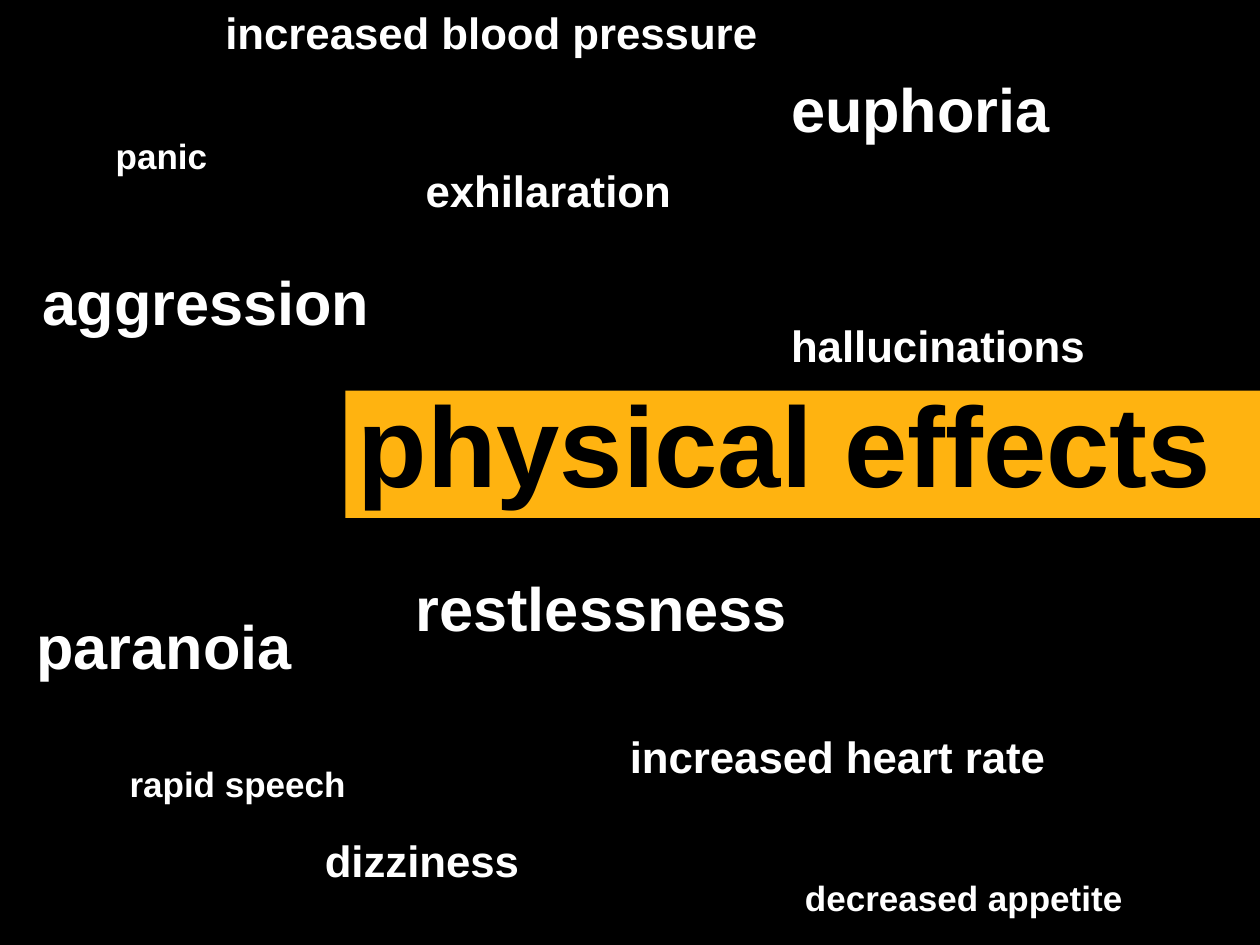
from pptx import Presentation
from pptx.dml.color import RGBColor
from pptx.enum.text import MSO_ANCHOR, MSO_AUTO_SIZE, PP_ALIGN
from pptx.util import Inches, Pt

COLORS = {"black": "000000", "white": "FFFFFF", "amber": "FFB310"}
FONT = "Arial"
WIDE, HIGH = 10, 7.5

# Font size -> box width and height
BOXES = {35: (6.02, 0.69), 25: (5.1, 0.52), 20: (5.13, 0.44)}

# Word, left, top, font size
EFFECTS = [
    ("exhilaration", 3.28, 1.25, 25),
    ("paranoia", 0.19, 4.78, 35),
    ("panic", 0.82, 1.02, 20),
    ("dizziness", 2.48, 6.57, 25),
    ("increased heart rate", 4.9, 5.74, 25),
    ("aggression", 0.24, 2.05, 35),
    ("euphoria", 6.18, 0.52, 35),
    ("hallucinations", 6.18, 2.48, 25),
    ("restlessness", 3.2, 4.48, 35),
    ("increased blood pressure", 1.69, 0, 25),
    ("decreased appetite", 6.29, 6.91, 20),
    ("rapid speech", 0.93, 6, 20),
]


def paint(fill, color):
    fill.solid()
    fill.fore_color.rgb = RGBColor.from_string(COLORS[color])


def write(shape, text, size, color="white", spacing=None):
    frame = shape.text_frame
    frame.word_wrap = True
    frame.auto_size = MSO_AUTO_SIZE.SHAPE_TO_FIT_TEXT
    frame.vertical_anchor = MSO_ANCHOR.TOP
    line = frame.paragraphs[0]
    line.alignment = PP_ALIGN.LEFT
    if spacing:
        line.line_spacing = Pt(spacing)
    run = line.add_run()
    run.text = text
    font = run.font
    font.name, font.size, font.bold = FONT, Pt(size), True
    font.color.rgb = RGBColor.from_string(COLORS[color])


def add_title(slide, text):
    title = slide.shapes.title
    title.left, title.top = Inches(2.74), Inches(3.1)
    title.width, title.height = Inches(WIDE - 2.74), Inches(1.01)
    paint(title.fill, "amber")
    write(title, text, 65, color="black", spacing=65)


def add_effect(slide, text, left, top, size):
    """Place one word, with its box ending at the slide edge at most."""
    width, height = BOXES[size]
    box = slide.shapes.add_textbox(
        Inches(left), Inches(top),
        Inches(min(width, WIDE - left)), Inches(height))
    write(box, text, size)


def main():
    deck = Presentation()
    deck.slide_width, deck.slide_height = Inches(WIDE), Inches(HIGH)
    slide = deck.slides.add_slide(deck.slide_layouts[5])
    paint(slide.background.fill, "black")
    add_title(slide, "physical effects")
    for effect in EFFECTS:
        add_effect(slide, *effect)
    deck.save("out.pptx")


if __name__ == "__main__":
    main()
